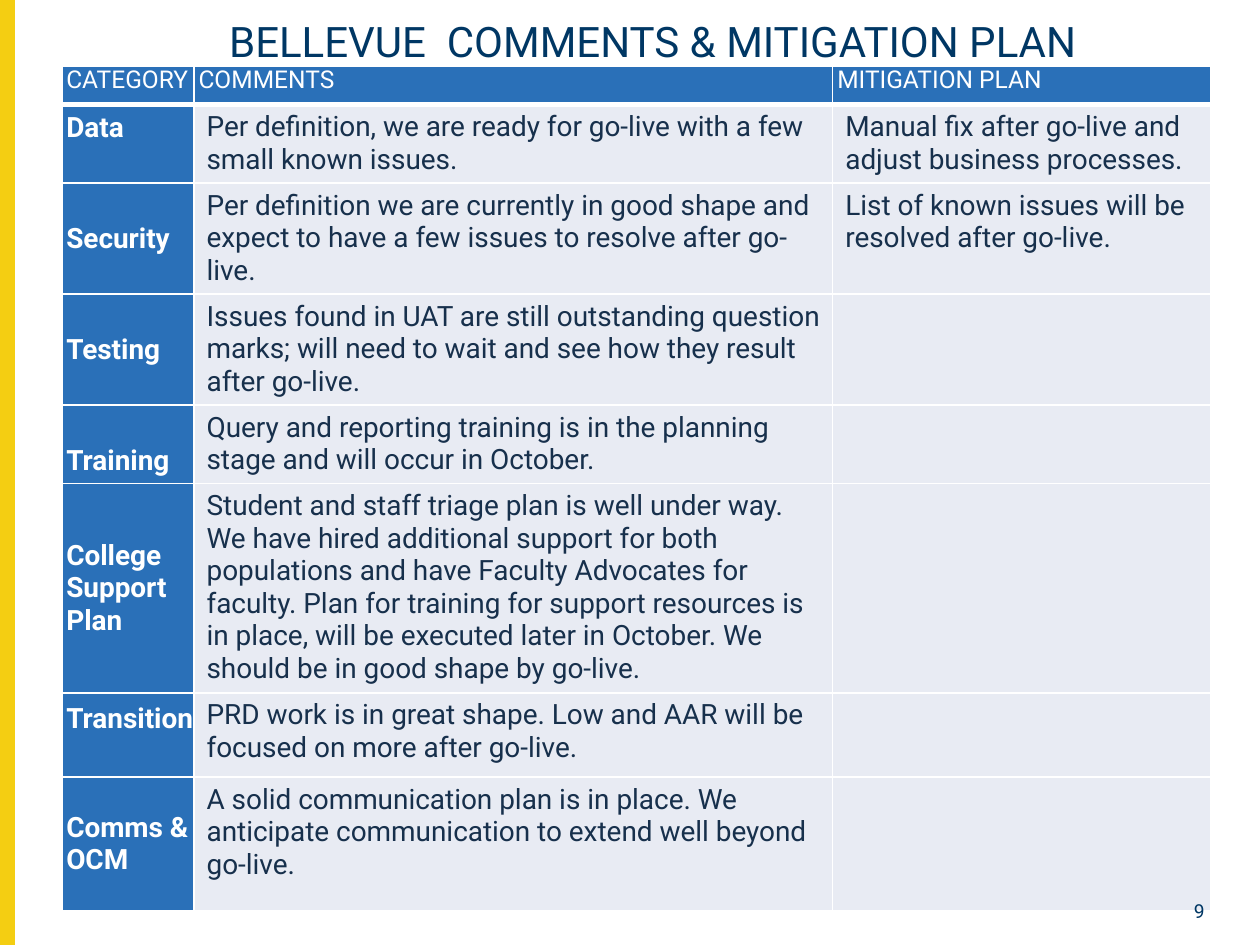
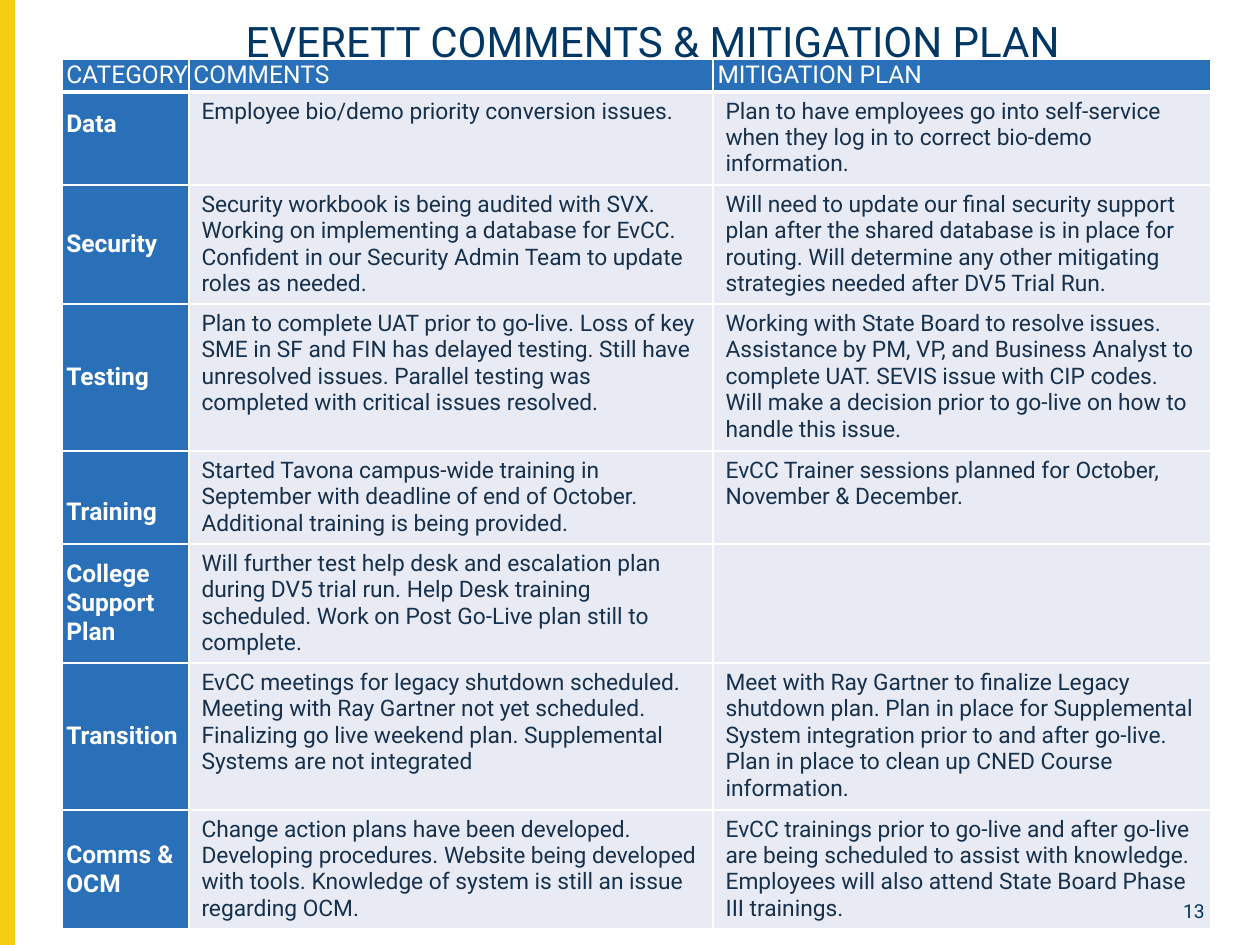
from dataclasses import dataclass

from lxml import etree
from pptx import Presentation
from pptx.dml.color import RGBColor
from pptx.enum.shapes import MSO_SHAPE
from pptx.enum.text import MSO_ANCHOR, MSO_AUTO_SIZE, PP_ALIGN
from pptx.oxml.ns import qn
from pptx.util import Pt

RECTANGLE = MSO_SHAPE.RECTANGLE
TOP, MIDDLE = MSO_ANCHOR.TOP, MSO_ANCHOR.MIDDLE
LEFT, CENTER, RIGHT = PP_ALIGN.LEFT, PP_ALIGN.CENTER, PP_ALIGN.RIGHT
NO_AUTOFIT = MSO_AUTO_SIZE.NONE


@dataclass(frozen=True)
class Theme:
    font: str = "Roboto"
    navy: str = "003764"
    ink: str = "17304C"
    blue: str = "2A70B8"
    pale: str = "E8EBF3"
    white: str = "FFFFFF"
    gold: str = "F4CE12"
    title_size: float = 24
    header_size: float = 14
    number_size: float = 11
    rule: float = 1
    header_rule: float = 3
    line_height: float = 1.17


THEME = Theme()
TITLE_ONLY = 5
TABLE_LEFT = 35.3
LABEL_INSET = 2.6
HEADINGS = ("CATEGORY", "COMMENTS", "MITIGATION PLAN")


@dataclass(frozen=True)
class Review:
    """One category; shift is -1 to raise its label half a line, 1 to lower it."""
    category: str
    comments: str
    mitigation: str
    height: float
    shift: int = 0


@dataclass(frozen=True)
class CollegePage:
    title: str
    number: int
    top: float
    widths: tuple[float, float, float]
    header_height: float
    header_anchor: MSO_ANCHOR
    label_size: float
    body_size: float
    reviews: tuple[Review, ...]


BELLEVUE = CollegePage(
    "BELLEVUE  COMMENTS & MITIGATION PLAN", 9, 37.6, (75.6, 365, 216), 22.3, TOP, 16, 16,
    (
        Review("Data",
               "Per definition, we are ready for go-live with a few small known issues.",
               "Manual fix after go-live and adjust business processes.", 44.7, -1),
        Review("Security",
               "Per definition we are currently in good shape and expect to have a few issues "
               "to resolve after go-live.",
               "List of known issues will be resolved after go-live.", 63.5),
        Review("Testing",
               "Issues found in UAT are still outstanding question marks; will need to wait and "
               "see how they result after go-live.", "", 63.5),
        Review("Training",
               "Query and reporting training is in the planning stage and will occur in October.",
               "", 44.7, 1),
        Review("College Support Plan",
               "Student and staff triage plan is well under way. We have hired additional support "
               "for both populations and have Faculty Advocates for faculty. Plan for training "
               "for support resources is in place, will be executed later in October. We should "
               "be in good shape by go-live.", "", 119.7),
        Review("Transition",
               "PRD work is in great shape. Low and AAR will be focused on more after go-live.",
               "", 48.2, -1),
        Review("Comms & OCM",
               "A solid communication plan is in place. We anticipate communication to extend "
               "well beyond go-live.", "", 76.3),
    ),
)

EVERETT = CollegePage(
    "EVERETT COMMENTS & MITIGATION PLAN", 13, 33.8, (72.7, 299.5, 284.4), 18.7, MIDDLE, 14, 13,
    (
        Review("Data",
               "Employee bio/demo priority conversion issues.",
               "Plan to have employees go into self-service when they log in to correct bio-demo "
               "information.", 53.2, -1),
        Review("Security",
               "Security workbook is being audited with SVX. Working on implementing a database "
               "for EvCC. Confident in our Security Admin Team to update roles as needed.",
               "Will need to update our final security support plan after the shared database is "
               "in place for routing. Will determine any other mitigating strategies needed after "
               "DV5 Trial Run.", 68.2),
        Review("Testing",
               "Plan to complete UAT prior to go-live. Loss of key SME in SF and FIN has delayed "
               "testing. Still have unresolved issues. Parallel testing was completed with "
               "critical issues resolved.",
               "Working with State Board to resolve issues. Assistance by PM, VP, and Business "
               "Analyst to complete UAT. SEVIS issue with CIP codes. Will make a decision prior "
               "to go-live on how to handle this issue.", 83.9),
        Review("Training",
               "Started Tavona campus-wide training in September with deadline of end of October. "
               "Additional training is being provided.",
               "EvCC Trainer sessions planned for October, November & December.", 53.2, 1),
        Review("College Support Plan",
               "Will further test help desk and escalation plan during DV5 trial run. Help Desk "
               "training scheduled. Work on Post Go-Live plan still to complete.", "", 68),
        Review("Transition",
               "EvCC meetings for legacy shutdown scheduled. Meeting with Ray Gartner not yet "
               "scheduled. Finalizing go live weekend plan. Supplemental Systems are not "
               "integrated",
               "Meet with Ray Gartner to finalize Legacy shutdown plan. Plan in place for "
               "Supplemental System integration prior to and after go-live. Plan in place to "
               "clean up CNED Course information.", 83.9),
        Review("Comms & OCM",
               "Change action plans have been developed. Developing procedures. Website being "
               "developed with tools. Knowledge of system is still an issue regarding OCM.",
               "EvCC trainings prior to go-live and after go-live are being scheduled to assist "
               "with knowledge. Employees will also attend State Board Phase III trainings.",
               68.2),
    ),
)


def rgb(color: str) -> RGBColor:
    return RGBColor.from_string(color)


def write(frame, text: str, *, size: float, color: str, bold: bool = False,
          align: PP_ALIGN = LEFT, spacing: float = 1.0) -> None:
    paragraph = frame.paragraphs[0]
    paragraph.alignment = align
    paragraph.line_spacing = spacing
    run = paragraph.add_run()
    run.text = text
    run.font.name = THEME.font
    run.font.size = Pt(size)
    run.font.bold = bold
    run.font.color.rgb = rgb(color)


def rule_cell(cell, top: float, bottom: float) -> None:
    """Draw white borders on all four sides, in the order the schema asks for."""
    properties = cell._tc.get_or_add_tcPr()
    widths = {"a:lnL": THEME.rule, "a:lnR": THEME.rule, "a:lnT": top, "a:lnB": bottom}
    for position, (side, width) in enumerate(widths.items()):
        border = etree.Element(qn(side), w=str(Pt(width)))
        fill = etree.SubElement(border, qn("a:solidFill"))
        etree.SubElement(fill, qn("a:srgbClr"), val=THEME.white)
        properties.insert(position, border)


def fill_cell(cell, text: str, fill: str, *, top_rule: float = THEME.rule,
              bottom_rule: float = THEME.rule, **text_format) -> None:
    cell.fill.solid()
    cell.fill.fore_color.rgb = rgb(fill)
    rule_cell(cell, top_rule, bottom_rule)
    if text:
        write(cell.text_frame, text, **text_format)


def place_label(cell, anchor: MSO_ANCHOR, above: float = 0, below: float = 0) -> None:
    cell.vertical_anchor = anchor
    cell.margin_left, cell.margin_right = Pt(LABEL_INSET), Pt(0)
    cell.margin_top, cell.margin_bottom = Pt(above), Pt(below)


def add_review_table(slide, page: CollegePage) -> None:
    heights = [page.header_height] + [review.height for review in page.reviews]
    table = slide.shapes.add_table(
        len(heights), len(HEADINGS), Pt(TABLE_LEFT), Pt(page.top),
        Pt(sum(page.widths)), Pt(sum(heights))).table
    table.horz_banding = False
    for column, width in zip(table.columns, page.widths):
        column.width = Pt(width)
    for row, height in zip(table.rows, heights):
        row.height = Pt(height)

    for column, heading in enumerate(HEADINGS):
        cell = table.cell(0, column)
        fill_cell(cell, heading, THEME.blue, bottom_rule=THEME.header_rule,
                  size=THEME.header_size, color=THEME.white)
        place_label(cell, page.header_anchor)

    line = page.label_size * THEME.line_height
    for row, review in enumerate(page.reviews, start=1):
        top_rule = THEME.header_rule if row == 1 else THEME.rule
        label = table.cell(row, 0)
        fill_cell(label, review.category, THEME.blue, top_rule=top_rule,
                  size=page.label_size, color=THEME.white, bold=True)
        place_label(label, MIDDLE, above=line * max(review.shift, 0),
                    below=line * max(-review.shift, 0))
        for column, text in enumerate((review.comments, review.mitigation), start=1):
            fill_cell(table.cell(row, column), text, THEME.pale, top_rule=top_rule,
                      size=page.body_size, color=THEME.ink)


def add_title(slide, text: str) -> None:
    title = slide.shapes.title
    title.left, title.top, title.width, title.height = Pt(35.3), Pt(7.9), Pt(675.4), Pt(34.6)
    frame = title.text_frame
    frame.auto_size = NO_AUTOFIT
    frame.vertical_anchor = MIDDLE
    write(frame, text, size=THEME.title_size, color=THEME.navy, align=CENTER, spacing=0.9)


def add_page_number(slide, number: int) -> None:
    frame = slide.shapes.add_textbox(Pt(661.7), Pt(510.5), Pt(36.7), Pt(18.7)).text_frame
    frame.word_wrap = True
    frame.margin_right = Pt(10)
    write(frame, str(number), size=THEME.number_size, color=THEME.navy, align=RIGHT)


def add_master_band(deck, slide) -> None:
    """Draw the gold side band, then move it to the master that all slides share."""
    band = slide.shapes.add_shape(RECTANGLE, Pt(0), Pt(0), Pt(8), deck.slide_height)
    band.shadow.inherit = False
    band.fill.solid()
    band.fill.fore_color.rgb = rgb(THEME.gold)
    band.line.color.rgb = rgb(THEME.gold)
    band.line.width = Pt(THEME.rule)
    band.element.nvSpPr.cNvPr.set("id", "20")
    deck.slide_master.shapes.element.insert(2, band.element)


def main() -> None:
    deck = Presentation()
    deck.slide_width, deck.slide_height = Pt(720), Pt(540)
    background = deck.slide_master.background.fill
    background.solid()
    background.fore_color.rgb = rgb(THEME.white)
    for page in (BELLEVUE, EVERETT):
        slide = deck.slides.add_slide(deck.slide_layouts[TITLE_ONLY])
        add_title(slide, page.title)
        add_review_table(slide, page)
        add_page_number(slide, page.number)
    add_master_band(deck, deck.slides[0])
    deck.save("out.pptx")


if __name__ == "__main__":
    main()
